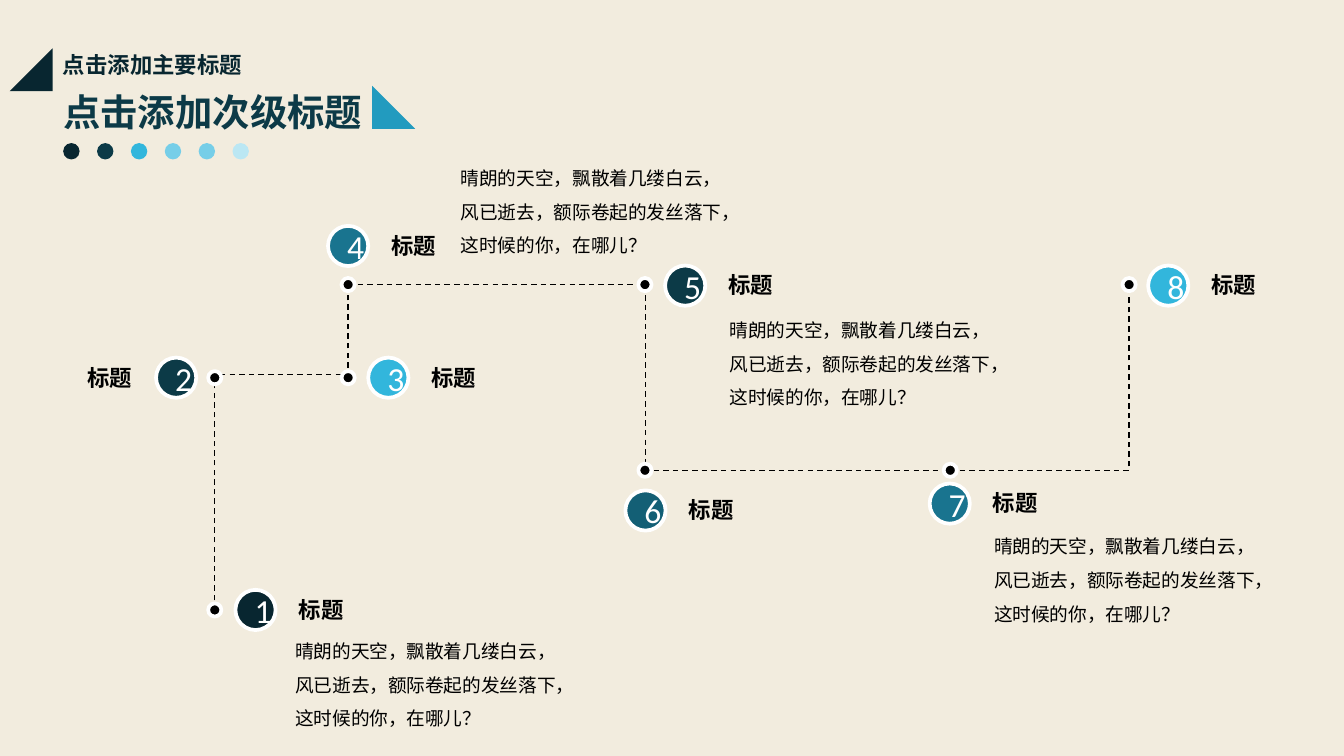
from lxml import etree
from pptx import Presentation
from pptx.dml.color import RGBColor
from pptx.enum.dml import MSO_LINE
from pptx.enum.shapes import MSO_CONNECTOR, MSO_SHAPE
from pptx.enum.text import MSO_ANCHOR, MSO_AUTO_SIZE, PP_ALIGN
from pptx.oxml.ns import qn
from pptx.util import Cm, Pt

COLORS = {
    "cream": "F2ECDE", "black": "000000", "white": "FFFFFF",
    "ink": "082630", "navy": "0C3A47", "deep": "135F75", "teal": "19748F",
    "blue": "229BBF", "sky": "32B6DC", "light": "76CEE8", "pale": "BBE7F3",
}
CJK = "Noto Sans CJK SC"
BODY = ["晴朗的天空，飘散着几缕白云，", "风已逝去，额际卷起的发丝落下，", "这时候的你，在哪儿？"]


def write(text, sp, size=12, color="black", bold=False, font=CJK,
          align=PP_ALIGN.LEFT, anchor=MSO_ANCHOR.TOP, spacing=None, grow=True):
    tf = sp.text_frame
    tf.word_wrap = True
    tf.vertical_anchor = anchor
    if grow:
        tf.auto_size = MSO_AUTO_SIZE.SHAPE_TO_FIT_TEXT
    for i, line in enumerate(text.split("\n")):
        p = tf.add_paragraph() if i else tf.paragraphs[0]
        p.alignment = align
        if spacing:
            p.line_spacing = spacing
        r = p.add_run()
        r.text = line
        r.font.size = Pt(size)
        r.font.bold = bold
        r.font.name = font
        r.font.color.rgb = RGBColor.from_string(COLORS[color])
        etree.SubElement(r.font._element, qn("a:ea")).set("typeface", font)


def draw(kind, cx, cy, d, color, ring=False):
    sp = s.shapes.add_shape(kind, Cm(cx - d / 2), Cm(cy - d / 2), Cm(d), Cm(d))
    sp.shadow.inherit = False
    sp.fill.solid()
    sp.fill.fore_color.rgb = RGBColor.from_string(COLORS[color])
    if ring:
        sp.line.color.rgb = RGBColor.from_string(COLORS["white"])
        sp.line.width = Pt(2)
    else:
        sp.line.fill.background()
    return sp


prs = Presentation()
prs.slide_width, prs.slide_height = Cm(25.4), Cm(14.29)
s = prs.slides.add_slide(prs.slide_layouts[5])
s.background.fill.solid()
s.background.fill.fore_color.rgb = RGBColor.from_string(COLORS["cream"])

title = s.shapes.title
title.left, title.top, title.width, title.height = Cm(0.94), Cm(1.55), Cm(6.5), Cm(1.09)
write("点击添加次级标题", title, size=20, color="navy", bold=True)
heading = s.shapes.add_textbox(Cm(0.94), Cm(0.84), Cm(4.37), Cm(0.76))
write("点击添加主要标题", heading, color="ink", bold=True)

for i, color in enumerate(["ink", "navy", "sky", "light", "light", "pale"]):
    draw(MSO_SHAPE.OVAL, 1.35 + 0.64 * i, 2.86, 0.31, color)
left_flag = draw(MSO_SHAPE.RIGHT_TRIANGLE, 0.59, 1.32, 0.81, "ink")
left_flag._element.spPr.find(qn("a:xfrm")).set("flipH", "1")
draw(MSO_SHAPE.RIGHT_TRIANGLE, 7.44, 2.03, 0.81, "blue")

# start, end, bend position, quarter turn
routes = [
    ((4.06, 11.53), (6.58, 5.38), 72400, True),
    ((6.58, 5.38), (17.83, 8.89), 50000, False),
    ((17.96, 8.89), (21.34, 5.38), -100, True),
]
for (x1, y1), (x2, y2), bend, turned in routes:
    if turned:
        cx, cy = (x1 + x2) / 2, (y1 + y2) / 2
        w, h = abs(y2 - y1), abs(x2 - x1)
        x1, y1, x2, y2 = cx + w / 2, cy + h / 2, cx - w / 2, cy - h / 2
    line = s.shapes.add_connector(MSO_CONNECTOR.ELBOW, Cm(x1), Cm(y1), Cm(x2), Cm(y2))
    line.line.color.rgb = RGBColor.from_string(COLORS["black"])
    line.line.width = Pt(0.75)
    line.line.dash_style = MSO_LINE.DASH
    spPr = line._element.spPr
    if turned:
        spPr.find(qn("a:xfrm")).set("rot", "5400000")
    geom = spPr.find(qn("a:prstGeom"))
    av = geom.find(qn("a:avLst"))
    if av is None:
        av = etree.SubElement(geom, qn("a:avLst"))
    gd = etree.SubElement(av, qn("a:gd"))
    gd.set("name", "adj1")
    gd.set("fmla", f"val {bend}")
    etree.SubElement(spPr, qn("a:effectLst"))

nodes = [(4.06, 11.53), (4.06, 7.14), (6.58, 7.14), (6.58, 5.38),
         (12.19, 5.38), (12.19, 8.89), (17.96, 8.89), (21.34, 5.38)]
for x, y in nodes:
    draw(MSO_SHAPE.OVAL, x, y, 0.25, "black", ring=True)

badges = [(4.83, 11.53, "ink"), (3.33, 7.14, "navy"), (7.34, 7.14, "sky"),
          (6.58, 4.65, "teal"), (12.95, 5.4, "navy"), (12.2, 9.65, "deep"),
          (17.95, 9.52, "teal"), (22.08, 5.4, "sky")]
for number, (x, y, color) in enumerate(badges, 1):
    badge = draw(MSO_SHAPE.OVAL, x, y, 0.76, color, ring=True)
    write(str(number), badge, size=18, color="white", font="Calibri",
          align=PP_ALIGN.CENTER, anchor=MSO_ANCHOR.MIDDLE, grow=False)
    offset = -2.01 if number == 2 else 0.49
    label = s.shapes.add_textbox(Cm(x + offset), Cm(y - 0.39), Cm(1.5), Cm(0.76))
    write("标题", label, bold=True, align=PP_ALIGN.CENTER)

for x, y in [(5.33, 11.76), (8.46, 2.82), (13.54, 5.69), (18.54, 9.78)]:
    body = s.shapes.add_textbox(Cm(x), Cm(y), Cm(6.22), Cm(2.16))
    write("\n".join(BODY), body, size=10, spacing=1.5)

prs.save("out.pptx")
